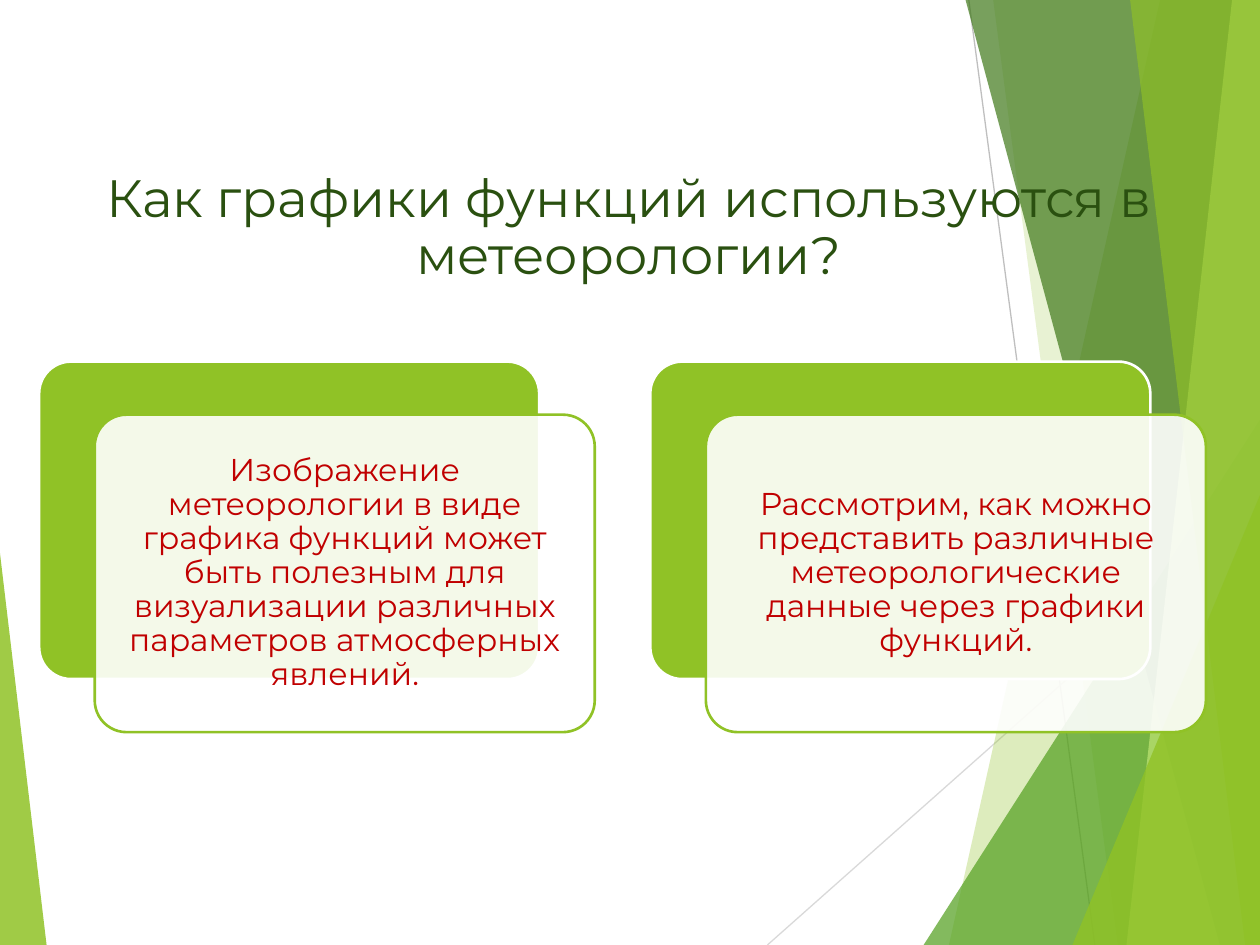
from lxml import etree
from pptx import Presentation
from pptx.dml.color import RGBColor
from pptx.enum.shapes import MSO_CONNECTOR, MSO_SHAPE
from pptx.enum.text import MSO_ANCHOR, PP_ALIGN
from pptx.oxml.ns import qn
from pptx.util import Cm, Pt

STRAIGHT = MSO_CONNECTOR.STRAIGHT
TRIANGLE = MSO_SHAPE.ISOSCELES_TRIANGLE
ROUNDED = MSO_SHAPE.ROUNDED_RECTANGLE
MIDDLE = MSO_ANCHOR.MIDDLE
CENTER = PP_ALIGN.CENTER

TITLE = "Как графики функций используются в метеорологии?"
CARDS = [
    "Изображение метеорологии в виде графика функций может быть полезным "
    "для визуализации различных параметров атмосферных явлений.",
    "Рассмотрим, как можно представить различные метеорологические данные "
    "через графики функций.",
]

THEME = {
    "font": "Montserrat",
    "title": {"size": Pt(30), "color": "2A5010"},
    "body": {"size": Pt(18), "color": "C00000"},
    "green": "90C226",
    "leaf": "54A021",
    "forest": "3F7819",
    "lime": "C0E474",
    "white": "FFFFFF",
    "outline": Pt(1.5),
    "hairline": Pt(0.75),
}

# All lengths below are centimetres.
SLIDE_WIDTH, SLIDE_HEIGHT = 25.4, 19.05
BLEED_TOP = -0.02
HAIRLINES = [  # start x, start y, end x, end y, colour
    (19.53, 0, 22.07, SLIDE_HEIGHT, "BFBFBF"),
    (SLIDE_WIDTH, 10.24, 15.47, SLIDE_HEIGHT, "D9D9D9"),
]
# Bands: left edge at the top, left edge at the bottom, colour, opacity.
# Wedges: left, top, width, apex position, colour, opacity.
DECORATION = [
    ("band", 23.39, 19.13, "green", 30),
    ("band", 20.02, 22.53, "green", 20),
    ("wedge", 18.62, 8.46, 6.78, 1, "leaf", 72),
    ("band", 19.46, 24.59, "forest", 70),
    ("band", 24.84, 22.71, "lime", 70),
    ("band", 22.78, 25.1, "green", 65),
    ("wedge", 21.62, 9.98, 3.78, 1, "green", 80),
    ("wedge", 0, 11.15, 0.94, 0, "green", 85),
]
TITLE_BOX = (1.3, 3.25, 22.76, 2.74)
CARD_LEFT, CARD_TOP, CARD_PITCH = 0.79, 7.29, 12.32
CARD_WIDTH, CARD_HEIGHT = 10.08, 6.4
PANEL_SHIFT_X, PANEL_SHIFT_Y = 1.12, 1.07
PANEL_INSET = 0.18


def paint(shape, color, opacity=100, outline=None):
    shape.shadow.inherit = False
    shape.fill.solid()
    shape.fill.fore_color.rgb = RGBColor.from_string(color)
    if opacity < 100:
        color_element = shape.fill._xPr.find(f".//{qn('a:srgbClr')}")
        alpha = etree.SubElement(color_element, qn("a:alpha"))
        alpha.set("val", str(opacity * 1000))
    if outline:
        shape.line.color.rgb = RGBColor.from_string(outline)
        shape.line.width = THEME["outline"]
    else:
        shape.line.fill.background()


def add_hairline(slide, start_x, start_y, end_x, end_y, color):
    ends = [Cm(value) for value in (start_x, start_y, end_x, end_y)]
    line = slide.shapes.add_connector(STRAIGHT, *ends)
    line.line.color.rgb = RGBColor.from_string(color)
    line.line.width = THEME["hairline"]
    etree.SubElement(line._element.spPr, qn("a:effectLst"))


def add_band(slide, top_left, bottom_left, color, opacity):
    """Draw a slanted band that runs to the right edge of the slide."""
    builder = slide.shapes.build_freeform(Cm(top_left), Cm(BLEED_TOP))
    corners = [(SLIDE_WIDTH, BLEED_TOP), (SLIDE_WIDTH, SLIDE_HEIGHT),
               (bottom_left, SLIDE_HEIGHT)]
    builder.add_line_segments([(Cm(x), Cm(y)) for x, y in corners], close=True)
    paint(builder.convert_to_shape(), THEME[color], opacity)


def add_wedge(slide, left, top, width, apex, color, opacity):
    """Draw a triangle that stands on the bottom edge of the slide."""
    shape = slide.shapes.add_shape(
        TRIANGLE, Cm(left), Cm(top), Cm(width), Cm(SLIDE_HEIGHT - top))
    shape.adjustments[0] = apex
    paint(shape, THEME[color], opacity)


def add_text(slide, box, text, style, inset=None):
    text_box = slide.shapes.add_textbox(*[Cm(value) for value in box])
    frame = text_box.text_frame
    frame_format = {"word_wrap": True, "vertical_anchor": MIDDLE}
    if inset is not None:
        for side in ("left", "top", "right", "bottom"):
            frame_format[f"margin_{side}"] = Cm(inset)
    paragraph = frame.paragraphs[0]
    paragraph.text = text
    formats = [
        (frame, frame_format),
        (paragraph, {"alignment": CENTER, "line_spacing": 0.9}),
        (paragraph.runs[0].font, {"name": THEME["font"], "size": style["size"]}),
    ]
    for target, values in formats:
        for name, value in values.items():
            setattr(target, name, value)
    paragraph.runs[0].font.color.rgb = RGBColor.from_string(style["color"])


def add_card(slide, left, text):
    """Draw a green plate, a translucent panel shifted over it, and the text."""
    green, white = THEME["green"], THEME["white"]
    panel_left, panel_top = left + PANEL_SHIFT_X, CARD_TOP + PANEL_SHIFT_Y
    layers = [(left, CARD_TOP, green, 100, white),
              (panel_left, panel_top, white, 90, green)]
    for x, y, color, opacity, outline in layers:
        shape = slide.shapes.add_shape(
            ROUNDED, Cm(x), Cm(y), Cm(CARD_WIDTH), Cm(CARD_HEIGHT))
        shape.adjustments[0] = 0.1
        paint(shape, color, opacity, outline)
    box = (panel_left + PANEL_INSET, panel_top + PANEL_INSET,
           CARD_WIDTH - 2 * PANEL_INSET, CARD_HEIGHT - 2 * PANEL_INSET)
    add_text(slide, box, text, THEME["body"], PANEL_INSET)


def main():
    presentation = Presentation()
    presentation.slide_width = Cm(SLIDE_WIDTH)
    presentation.slide_height = Cm(SLIDE_HEIGHT)
    slide = presentation.slides.add_slide(presentation.slide_layouts[6])

    for hairline in HAIRLINES:
        add_hairline(slide, *hairline)
    drawers = {"band": add_band, "wedge": add_wedge}
    for kind, *values in DECORATION:
        drawers[kind](slide, *values)

    add_text(slide, TITLE_BOX, TITLE, THEME["title"])
    for index, text in enumerate(CARDS):
        add_card(slide, CARD_LEFT + index * CARD_PITCH, text)

    presentation.save("out.pptx")


if __name__ == "__main__":
    main()
